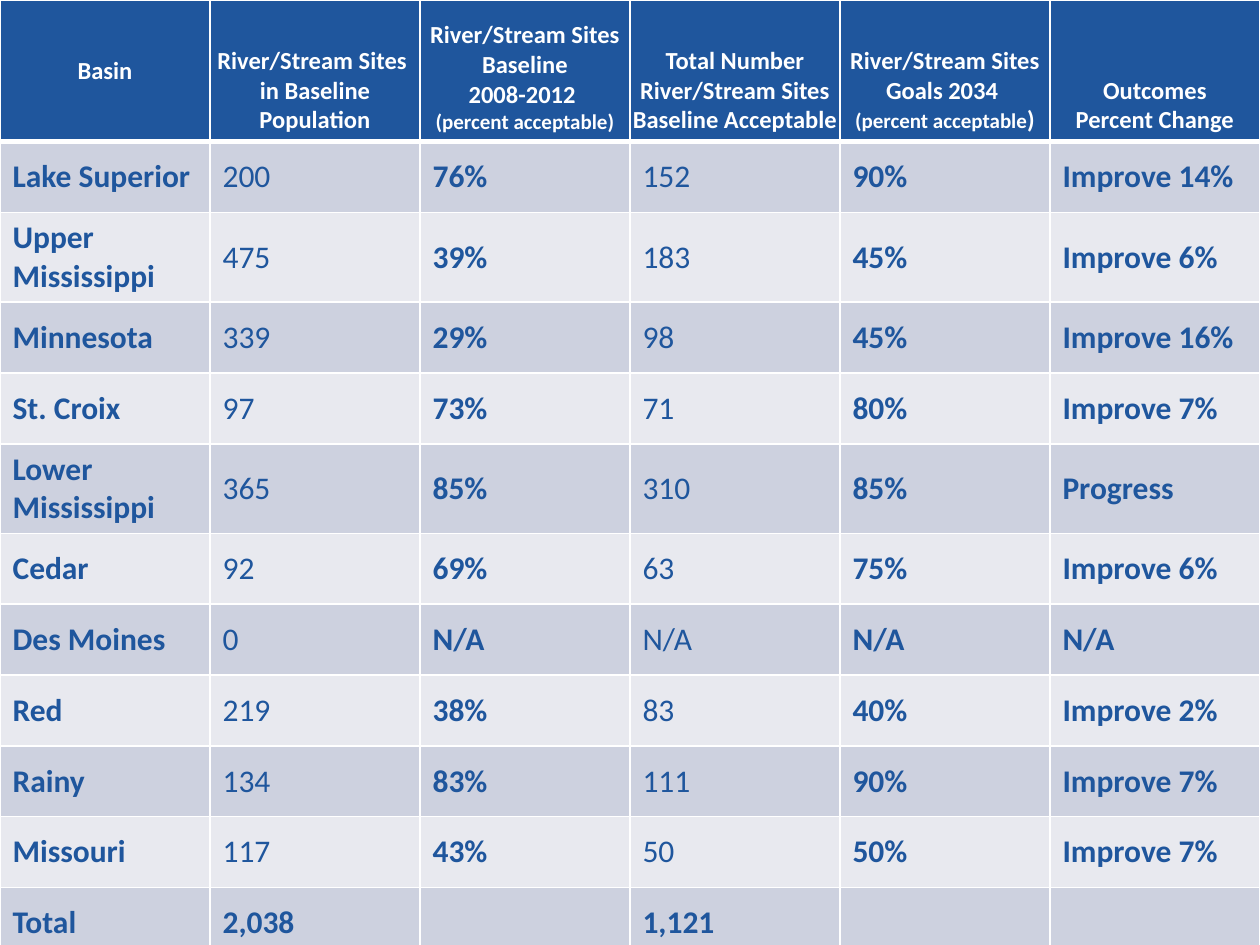
from lxml.etree import SubElement
from pptx import Presentation
from pptx.dml.color import RGBColor
from pptx.enum.text import MSO_ANCHOR as Anchor, PP_ALIGN as Align
from pptx.oxml.ns import qn
from pptx.util import Pt

BLUE = RGBColor(0x1F, 0x56, 0x9D)
WHITE = RGBColor(0xFF, 0xFF, 0xFF)
BAND_DARK = RGBColor(0xCD, 0xD1, 0xDF)
BAND_LIGHT = RGBColor(0xE8, 0xE9, 0xEF)
FONT = "Calibri"
HEADER_SIZE, NOTE_SIZE, BODY_SIZE = 14, 12, 18

# Content: each heading is a list of lines, each line a list of (text, size) runs
HEADINGS = [
    [[("Basin", HEADER_SIZE)]],
    [[("River/Stream Sites ", HEADER_SIZE)], [("in Baseline Population", HEADER_SIZE)]],
    [[("River/Stream Sites Baseline", HEADER_SIZE)], [("2008-2012 ", HEADER_SIZE)],
     [("(percent acceptable)", NOTE_SIZE)]],
    [[("Total Number River/Stream Sites Baseline Acceptable", HEADER_SIZE)]],
    [[("River/Stream Sites", HEADER_SIZE)], [("Goals 2034 ", HEADER_SIZE)],
     [("(percent acceptable", NOTE_SIZE), (")", HEADER_SIZE)]],
    [[("Outcomes", HEADER_SIZE)], [("Percent Change", HEADER_SIZE)]],
]
BASINS = [
    ("Lake Superior", "200", "76%", "152", "90%", "Improve 14%"),
    ("Upper Mississippi", "475", "39%", "183", "45%", "Improve 6%"),
    ("Minnesota", "339", "29%", "98", "45%", "Improve 16%"),
    ("St. Croix", "97", "73%", "71", "80%", "Improve 7%"),
    ("Lower Mississippi", "365", "85%", "310", "85%", "Progress"),
    ("Cedar", "92", "69%", "63", "75%", "Improve 6%"),
    ("Des Moines", "0", "N/A", "N/A", "N/A", "N/A"),
    ("Red", "219", "38%", "83", "40%", "Improve 2%"),
    ("Rainy", "134", "83%", "111", "90%", "Improve 7%"),
    ("Missouri", "117", "43%", "50", "50%", "Improve 7%"),
    ("Total", "2,038", "", "1,121", "", ""),
]
COUNT_COLUMNS = (1, 3)

# Geometry in points
SLIDE_WIDTH, SLIDE_HEIGHT = 720, 540
HEADER_HEIGHT, ROW_HEIGHT, TALL_ROW_HEIGHT = 81, 40.5, 49
HEADER_FORMAT = {"margin_left": Pt(0.75), "margin_right": Pt(0.75),
                 "margin_top": Pt(3.6), "margin_bottom": Pt(3.6)}


def set_attributes(target, values):
    for name, value in values.items():
        setattr(target, name, value)


def add_run(paragraph, text, size, color, bold):
    run = paragraph.add_run()
    run.text = text
    set_attributes(run.font, {"name": FONT, "size": Pt(size), "bold": bold})
    run.font.color.rgb = color


def add_break(paragraph, size):
    paragraph.add_line_break()
    line_break = paragraph._p.findall(qn("a:br"))[-1]
    SubElement(line_break, qn("a:rPr"), sz=str(size * 100))


def format_cell(cell, fill_color, top, bottom):
    properties = cell._tc.get_or_add_tcPr()
    for side, width in (("L", 1), ("R", 1), ("T", top), ("B", bottom)):
        line = SubElement(properties, qn(f"a:ln{side}"), w=str(Pt(width)))
        fill = SubElement(line, qn("a:solidFill"))
        SubElement(fill, qn("a:srgbClr"), val=str(WHITE))
    cell.fill.solid()
    cell.fill.fore_color.rgb = fill_color


presentation = Presentation()
set_attributes(presentation, {"slide_width": Pt(SLIDE_WIDTH), "slide_height": Pt(SLIDE_HEIGHT)})
slide = presentation.slides.add_slide(presentation.slide_layouts[6])

# Table grid
heights = [HEADER_HEIGHT] + [
    TALL_ROW_HEIGHT if "Mississippi" in basin[0] else ROW_HEIGHT for basin in BASINS]
table = slide.shapes.add_table(len(heights), len(HEADINGS), 0, 0,
                               Pt(SLIDE_WIDTH), Pt(sum(heights))).table
table.horz_banding = False
for column in table.columns:
    column.width = Pt(SLIDE_WIDTH / len(HEADINGS))
for row, height in zip(table.rows, heights):
    row.height = Pt(height)

# Header row
for column_index, lines in enumerate(HEADINGS):
    cell = table.cell(0, column_index)
    format_cell(cell, BLUE, top=1, bottom=3)
    set_attributes(cell, HEADER_FORMAT)
    cell.vertical_anchor = Anchor.BOTTOM if column_index else Anchor.MIDDLE
    paragraph = cell.text_frame.paragraphs[0]
    paragraph.alignment = Align.CENTER
    for line_index, runs in enumerate(lines):
        if line_index:
            add_break(paragraph, HEADER_SIZE)
        for text, size in runs:
            add_run(paragraph, text, size, WHITE, True)

# Basin rows and total
for row_index, basin in enumerate(BASINS, start=1):
    for column_index, text in enumerate(basin):
        cell = table.cell(row_index, column_index)
        format_cell(cell, BAND_DARK if row_index % 2 else BAND_LIGHT,
                    top=3 if row_index == 1 else 1, bottom=1)
        cell.vertical_anchor = Anchor.MIDDLE
        if text:
            bold = column_index not in COUNT_COLUMNS or basin[0] == "Total"
            add_run(cell.text_frame.paragraphs[0], text, BODY_SIZE, BLUE, bold)

presentation.save("out.pptx")
